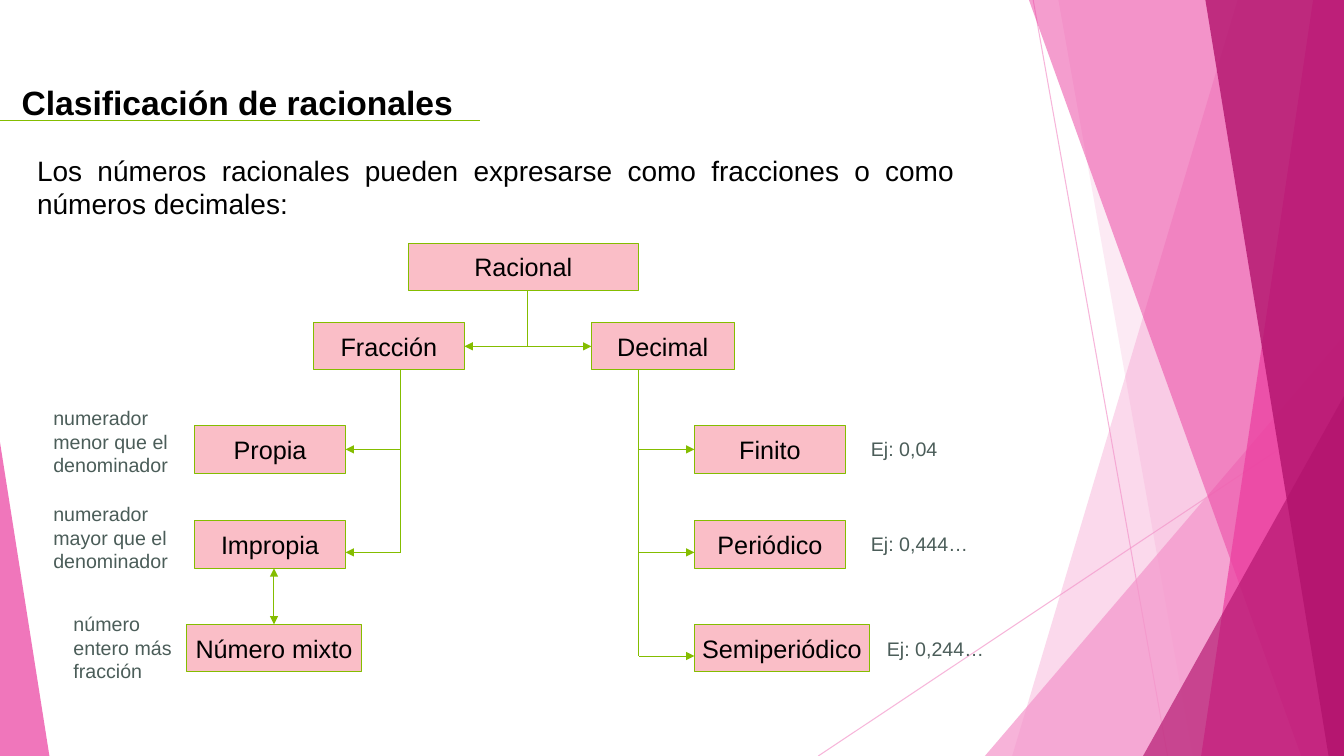
"""Build a slide that classifies rational numbers in a tree diagram."""
import lxml.etree
import pptx
import pptx.dml.color
import pptx.enum.shapes
import pptx.enum.text
import pptx.oxml.ns
import pptx.util

Pt = pptx.util.Pt
RGBColor = pptx.dml.color.RGBColor
qn = pptx.oxml.ns.qn
MSO_SHAPE = pptx.enum.shapes.MSO_SHAPE
PP_ALIGN = pptx.enum.text.PP_ALIGN

COLORS = {
    "black": "000000", "note": "4B5D59", "green": "84BD00", "box": "F77F90",
    "light": "F496CB", "pink": "EB3D9F", "dark": "B2136D",
}
WIDTH, HEIGHT = 960, 540
BOX_HEIGHT = 34

presentation = pptx.Presentation()
presentation.slide_width = Pt(WIDTH)
presentation.slide_height = Pt(HEIGHT)
slide = presentation.slides.add_slide(presentation.slide_layouts[6])
shapes = slide.shapes


def set_opacity(shape, percent):
    """Make every colour set so far on the shape translucent."""
    for color in shape.element.spPr.iter(qn("a:srgbClr")):
        lxml.etree.SubElement(color, qn("a:alpha"), val=str(percent * 1000))


def add_line(start, end, color="green", arrows=()):
    """Draw a thin line with the given arrowheads (headEnd, tailEnd)."""
    line = shapes.add_connector(
        pptx.enum.shapes.MSO_CONNECTOR.STRAIGHT, *map(Pt, start + end))
    line.line.color.rgb = RGBColor.from_string(COLORS[color])
    line.line.width = Pt(0.75)
    outline = line.element.spPr.find(qn("a:ln"))
    for arrow in arrows:
        lxml.etree.SubElement(outline, qn("a:" + arrow), type="triangle")
    lxml.etree.SubElement(line.element.spPr, qn("a:effectLst"))
    return line


for start, end in [((738, 0), (834, HEIGHT)), ((WIDTH, 290), (584.5, HEIGHT))]:
    set_opacity(add_line(start, end, "light"), 70)

# Two numbers give a full-height panel (top x, bottom x) reaching the right edge;
# four give a triangle (left, top, width, apex position).
facets = [
    ("light", 36, (884, 723)),
    ("light", 20, (756, 852)),
    ("light", 72, (703.5, 240, 256.5, 1)),
    ("pink", 50, (735, 929.5)),
    ("pink", 70, (938, 858)),
    ("dark", 80, (861, 949)),
    ("dark", 66, (816.5, 283, 143.5, 1)),
    ("pink", 70, (0, 316, 35.3, 0)),
]
for color, opacity, outline in facets:
    if len(outline) == 2:
        top_x, bottom_x = outline
        builder = shapes.build_freeform(Pt(top_x), 0)
        corners = [(WIDTH, 0), (WIDTH, HEIGHT), (bottom_x, HEIGHT)]
        builder.add_line_segments([(Pt(x), Pt(y)) for x, y in corners])
        facet = builder.convert_to_shape()
    else:
        left, top, width, apex = outline
        facet = shapes.add_shape(
            MSO_SHAPE.ISOSCELES_TRIANGLE, Pt(left), Pt(top), Pt(width), Pt(HEIGHT - top))
        facet.adjustments[0] = apex
    facet.shadow.inherit = False
    facet.fill.solid()
    facet.fill.fore_color.rgb = RGBColor.from_string(COLORS[color])
    facet.line.fill.background()
    set_opacity(facet, opacity)

texts = [
    ("Clasificación de racionales", 8.4, 54.7, 640, 37, 24, "black"),
    ("Los números racionales pueden expresarse como fracciones o como números decimales:",
     19.4, 105.8, 669.6, 57, 20, "black"),
    ("numerador menor que el denominador", 31, 286.6, 105, 57.6, 14, "note"),
    ("numerador mayor que el denominador", 31, 355, 105, 57.6, 14, "note"),
    ("número entero más fracción", 45.4, 433.6, 105, 57.6, 14, "note"),
    ("Ej: 0,04", 615, 308.2, 105, 24, 14, "note"),
    ("Ej: 0,444…", 615, 376.6, 105, 24, 14, "note"),
    ("Ej: 0,244…", 626.4, 451.4, 105, 24, 14, "note"),
]
for text, left, top, width, height, size, color in texts:
    text_box = shapes.add_textbox(Pt(left), Pt(top), Pt(width), Pt(height))
    text_box.text_frame.word_wrap = True
    paragraph = text_box.text_frame.paragraphs[0]
    paragraph.text = text
    paragraph.alignment = PP_ALIGN.JUSTIFY if size == 20 else PP_ALIGN.LEFT
    paragraph.font.name = "Arial"
    paragraph.font.size = Pt(size)
    paragraph.font.bold = size == 24
    paragraph.font.color.rgb = RGBColor.from_string(COLORS[color])

add_line((0, 86.4), (342.7, 86.4))

boxes = [
    ("Racional", 291.6, 173.6, 164.4),
    ("Fracción", 223.8, 230.3, 108),
    ("Decimal", 422.4, 230.3, 102),
    ("Propia", 138.9, 304, 108),
    ("Impropia", 138.9, 372, 108),
    ("Número mixto", 133.2, 446, 125),
    ("Finito", 496, 304, 108),
    ("Periódico", 496, 372, 108),
    ("Semiperiódico", 496, 446, 125),
]
for name, left, top, width in boxes:
    box = shapes.add_shape(MSO_SHAPE.RECTANGLE, Pt(left), Pt(top), Pt(width), Pt(BOX_HEIGHT))
    box.shadow.inherit = False
    box.fill.solid()
    box.fill.fore_color.rgb = RGBColor.from_string(COLORS["box"])
    set_opacity(box, 50)
    box.line.color.rgb = RGBColor.from_string(COLORS["green"])
    box.line.width = Pt(0.75)
    box.text_frame.word_wrap = False
    box.text_frame.vertical_anchor = pptx.enum.text.MSO_ANCHOR.MIDDLE
    paragraph = box.text_frame.paragraphs[0]
    paragraph.text = name
    paragraph.alignment = PP_ALIGN.CENTER
    paragraph.font.name = "Arial"
    paragraph.font.size = Pt(18)
    paragraph.font.color.rgb = RGBColor.from_string(COLORS["black"])

both_ends = ("headEnd", "tailEnd")
add_line((377, 207.6), (377, 247.4))
add_line((331.8, 247.4), (422.4, 247.4), arrows=both_ends)
add_line((195.7, 406), (195.7, 446), arrows=both_ends)

branches = [(286.4, 246.9, (321, 394.6)), (456.4, 496, (321, 394.6, 468.6))]
for stem_x, box_x, branch_tops in branches:
    add_line((stem_x, 264.3), (stem_x, branch_tops[-1]))
    for branch_y in branch_tops:
        add_line((stem_x, branch_y), (box_x, branch_y), arrows=("tailEnd",))

presentation.save("out.pptx")
